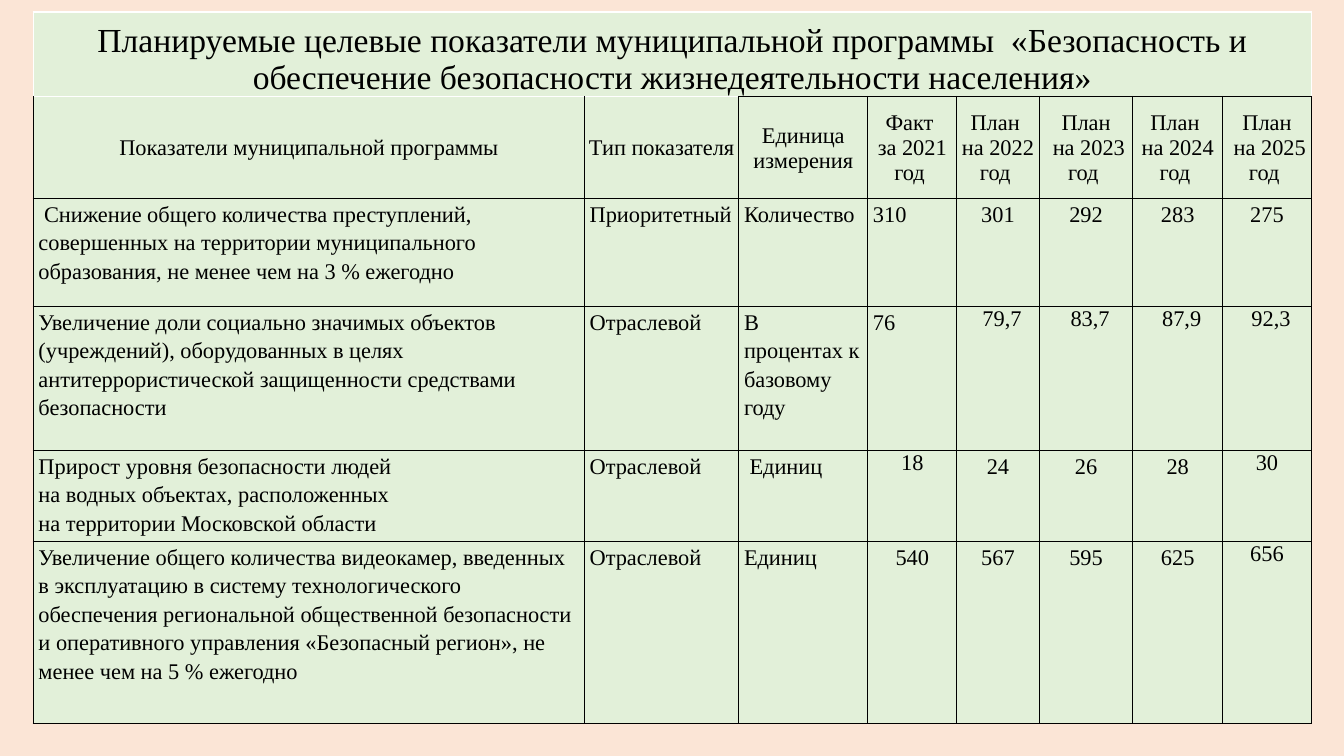
import copy
import lxml.etree
import pptx
import pptx.dml.color
import pptx.enum.text
import pptx.oxml.ns
import pptx.util

COLORS = {"page": "FBE5D6", "cell": "E2F0D9", "ink": "000000", "title_line": "FFFFFF"}
ALIGN = pptx.enum.text.PP_ALIGN
ANCHOR = pptx.enum.text.MSO_ANCHOR
Cm = pptx.util.Cm
qn = pptx.oxml.ns.qn

COLUMN_WIDTHS = [13.89, 3.89, 3.25, 2.24, 2.08, 2.36, 2.26, 2.24]
ROW_HEIGHTS = [2.13, 2.57, 2.72, 3.63, 2.29, 4.6]

TITLE = "Планируемые целевые показатели муниципальной программы  «Безопасность и обеспечение безопасности жизнедеятельности населения»"
HEADERS = [
    "Показатели муниципальной программы", "Тип показателя", "Единица измерения",
    "Факт \nза 2021 год ", "План \nна 2022 год ", "План\n на 2023 год ",
    "План \nна 2024 год ", "План\n на 2025 год ",
]
INDICATORS = [
    ("LLLLNNNN", [
        " Снижение общего количества преступлений, совершенных на территории муниципального образования, не менее чем на 3 % ежегодно",
        "Приоритетный", "Количество", "310", "301", "292", "283", "275"]),
    ("LLLLIIII", [
        "Увеличение доли социально значимых объектов (учреждений), оборудованных в целях антитеррористической защищенности средствами безопасности",
        "Отраслевой", "В процентах к базовому году", "76", "79,7", "83,7", "87,9", "92,3"]),
    ("LLLTNNNT", [
        "Прирост уровня безопасности людей\vна водных объектах, расположенных\vна территории Московской области",
        "Отраслевой", " Единиц", "18", "24", "26", "28", "30"]),
    ("LLLNNNNT", [
        "Увеличение общего количества видеокамер, введенных в эксплуатацию в систему технологического обеспечения региональной общественной безопасности и оперативного управления «Безопасный регион», не менее чем на 5 % ежегодно",
        "Отраслевой", "Единиц", "540", "567", "595", "625", "656"]),
]
HEADING = {"align": ALIGN.CENTER, "anchor": ANCHOR.MIDDLE, "margin": 0.03, "top": 0.03}
FORMATS = {
    "L": {"spacing": 1.15},
    "N": {"align": ALIGN.CENTER, "spacing": 1.15, "margin": 0.18},
    "T": {"align": ALIGN.CENTER, "margin": 0.18},
    "I": {"align": ALIGN.CENTER, "margin": 0.18, "indent": 0.2},
}


def rgb(name):
    return pptx.dml.color.RGBColor.from_string(COLORS[name])


def write_text(cell, text, size=16, align=ALIGN.LEFT, anchor=ANCHOR.TOP,
               spacing=1.0, margin=0.13, top=0, indent=0):
    cell.margin_left = cell.margin_right = Cm(margin)
    cell.margin_top, cell.margin_bottom = Cm(top), 0
    cell.vertical_anchor = anchor
    cell.text = text
    for para in cell.text_frame.paragraphs:
        para.alignment = align
        para.line_spacing = spacing
        if indent:
            para._p.get_or_add_pPr().set("marL", str(Cm(indent)))
        for span in para.runs:
            span.font.name = "Times New Roman"
            span.font.size = pptx.util.Pt(size)
            span.font.color.rgb = rgb("ink")
        for line_break in para._p.findall(qn("a:br")):
            line_break.append(copy.deepcopy(para.runs[0]._r.rPr))


class IndicatorSlide:
    def __init__(self, deck):
        self.page = deck.slides.add_slide(deck.slide_layouts[6])
        self.page.background.fill.solid()
        self.page.background.fill.fore_color.rgb = rgb("page")

    def add_grid(self, left, top, widths, heights):
        frame = self.page.shapes.add_table(
            len(heights), len(widths), Cm(left), Cm(top), Cm(sum(widths)), Cm(sum(heights)))
        table = frame.table
        table.first_row = table.horz_banding = False
        for column, width in zip(table.columns, widths):
            column.width = Cm(width)
        for row, height in zip(table.rows, heights):
            row.height = Cm(height)
        return table

    def style_cell(self, cell, line="ink", top_line=None):
        properties = cell._tc.get_or_add_tcPr()
        for side in ("lnL", "lnR", "lnT", "lnB"):
            border = lxml.etree.SubElement(properties, qn("a:" + side), w=str(pptx.util.Pt(1)))
            fill = lxml.etree.SubElement(border, qn("a:solidFill"))
            color = top_line if side == "lnT" and top_line else line
            lxml.etree.SubElement(fill, qn("a:srgbClr"), val=COLORS[color])
        cell.fill.solid()
        cell.fill.fore_color.rgb = rgb("cell")

    def add_indicators(self):
        table = self.add_grid(0.84, 0.3, COLUMN_WIDTHS, ROW_HEIGHTS)
        last = len(COLUMN_WIDTHS) - 1
        table.cell(0, 0).merge(table.cell(0, last))
        for column in range(last + 1):
            self.style_cell(table.cell(0, column), line="title_line")
        write_text(table.cell(0, 0), TITLE, **{**HEADING, "size": 24, "anchor": ANCHOR.BOTTOM})
        for column, text in enumerate(HEADERS):
            cell = table.cell(1, column)
            self.style_cell(cell, top_line="title_line" if column < 2 else None)
            write_text(cell, text, **HEADING)
        for row, (formats, values) in enumerate(INDICATORS, start=2):
            for column, (key, text) in enumerate(zip(formats, values)):
                cell = table.cell(row, column)
                self.style_cell(cell)
                write_text(cell, text, **FORMATS[key])


def main():
    deck = pptx.Presentation()
    deck.slide_width, deck.slide_height = Cm(33.87), Cm(19.05)
    IndicatorSlide(deck).add_indicators()
    deck.save("out.pptx")


if __name__ == "__main__":
    main()
